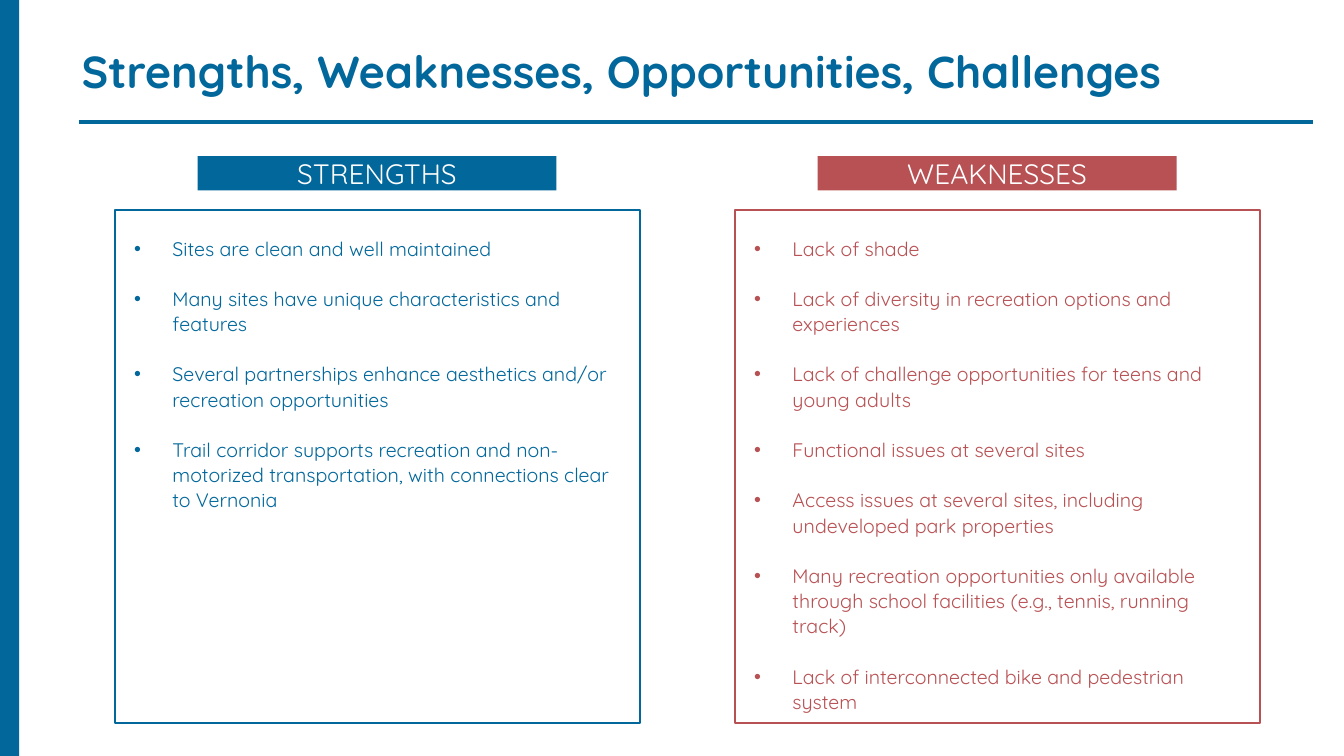
import pptx
import pptx.util
import pptx.dml.color
import pptx.enum.shapes
import pptx.enum.text
import pptx.oxml.ns
import lxml.etree

Inches = pptx.util.Inches
Pt = pptx.util.Pt
qn = pptx.oxml.ns.qn

COLORS = {"blue": "02679B", "red": "B85154", "white": "FFFFFF"}

COLUMNS = [
    ("STRENGTHS", "blue", 1.14, [
        "Sites are clean and well maintained",
        "Many sites have unique characteristics and features",
        "Several partnerships enhance aesthetics and/or recreation opportunities",
        "Trail corridor supports recreation and non-motorized transportation, "
        "with connections clear to Vernonia",
    ]),
    ("WEAKNESSES", "red", 7.29, [
        "Lack of shade",
        "Lack of diversity in recreation options and experiences",
        "Lack of challenge opportunities for teens and young adults",
        "Functional issues at several sites",
        "Access issues at several sites, including undeveloped park properties",
        "Many recreation opportunities only available through school facilities "
        "(e.g., tennis, running track)",
        "Lack of interconnected bike and pedestrian system",
    ]),
]


class SlideBuilder:
    font_name = "Quicksand"

    def __init__(self, page):
        self.page = page

    def color(self, name):
        return pptx.dml.color.RGBColor.from_string(COLORS[name])

    def place(self, shape, left, top, width, height):
        shape.left, shape.top = Inches(left), Inches(top)
        shape.width, shape.height = Inches(width), Inches(height)

    def add_span(self, para, text, size, color, bold=False):
        span = para.add_run()
        span.text = text
        span.font.name = self.font_name
        span.font.size = Pt(size)
        span.font.bold = bold
        span.font.color.rgb = self.color(color)

    def clear_margins(self, frame):
        frame.margin_left = frame.margin_right = 0
        frame.margin_top = frame.margin_bottom = 0

    def title(self, text):
        box = self.page.shapes.title
        self.place(box, 0.71, 0.4, 12.31, 0.66)
        frame = box.text_frame
        frame.word_wrap = True
        frame.auto_size = pptx.enum.text.MSO_AUTO_SIZE.NONE
        frame.vertical_anchor = pptx.enum.text.MSO_ANCHOR.MIDDLE
        para = frame.paragraphs[0]
        para.alignment = pptx.enum.text.PP_ALIGN.LEFT
        para.line_spacing = 0.9
        self.add_span(para, text, 32, "blue", bold=True)

    def rectangle(self, left, top, width, height, fill=None, outline=None):
        box = self.page.shapes.add_shape(
            pptx.enum.shapes.MSO_SHAPE.RECTANGLE,
            Inches(left), Inches(top), Inches(width), Inches(height))
        box.shadow.inherit = False
        if fill:
            box.fill.solid()
            box.fill.fore_color.rgb = self.color(fill)
        else:
            box.fill.background()
        if outline:
            box.line.color.rgb = self.color(outline)
            box.line.width = Pt(1.5)
        else:
            box.line.fill.background()
        return box

    def rule(self, left, right, top):
        line = self.page.shapes.add_connector(
            pptx.enum.shapes.MSO_CONNECTOR.STRAIGHT,
            Inches(left), Inches(top), Inches(right), Inches(top))
        line.line.color.rgb = self.color("blue")
        line.line.width = Pt(3)
        lxml.etree.SubElement(line._element.spPr, qn("a:effectLst"))

    def heading(self, text, left, color):
        box = self.rectangle(left, 1.55, 3.56, 0.34, fill=color)
        self.clear_margins(box.text_frame)
        para = box.text_frame.paragraphs[0]
        para.alignment = pptx.enum.text.PP_ALIGN.CENTER
        self.add_span(para, text, 20, "white")

    def bullets(self, box, items, left, height, color):
        self.place(box, left, 2.33, 4.82, height)
        frame = box.text_frame
        self.clear_margins(frame)
        frame.word_wrap = True
        frame.auto_size = pptx.enum.text.MSO_AUTO_SIZE.NONE
        frame.vertical_anchor = pptx.enum.text.MSO_ANCHOR.TOP
        for index, item in enumerate(items):
            para = frame.add_paragraph() if index else frame.paragraphs[0]
            properties = para._p.get_or_add_pPr()
            properties.set("marL", str(Inches(0.38)))
            properties.set("indent", str(-Inches(0.38)))
            lxml.etree.SubElement(properties, qn("a:buFont")).set("typeface", "Arial")
            lxml.etree.SubElement(properties, qn("a:buChar")).set("char", "•")
            para.line_spacing = 1.07
            para.space_before = Pt(18 if index else 0)
            para.space_after = Pt(0)
            self.add_span(para, item, 14, color)


def main():
    deck = pptx.Presentation()
    deck.slide_width, deck.slide_height = Inches(13.33), Inches(7.5)
    page = deck.slides.add_slide(deck.slide_layouts.get_by_name("Two Content"))
    builder = SlideBuilder(page)

    builder.rectangle(0, 0, 0.19, 7.5, fill="blue")
    builder.title("Strengths, Weaknesses, Opportunities, Challenges")
    builder.rule(0.78, 13.02, 1.21)
    for number, (heading, color, left, items) in enumerate(COLUMNS, start=1):
        builder.rectangle(left, 2.08, 5.21, 5.09, outline=color)
        builder.heading(heading, left + 0.82, color)
        builder.bullets(page.placeholders[number], items, left + 0.19, 4.78, color)

    deck.save("out.pptx")


if __name__ == "__main__":
    main()
